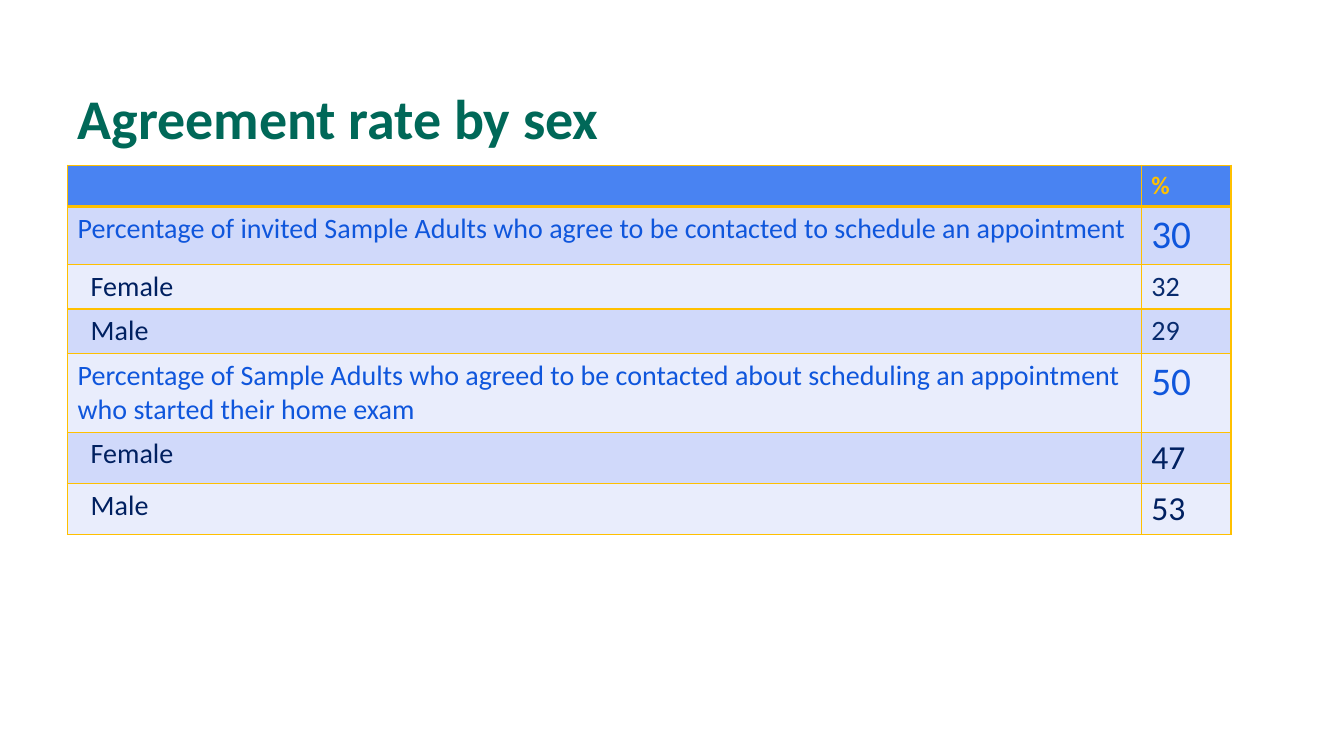
from pptx import Presentation
from pptx import util as u
from pptx.dml.color import RGBColor
from pptx.enum import text
from pptx.oxml import parse_xml
from pptx.oxml.ns import nsdecls

FONT = "Calibri"
GREEN = RGBColor(0x00, 0x68, 0x58)
GOLD = RGBColor(0xFF, 0xC0, 0x00)
HEADER_BLUE = RGBColor(0x49, 0x83, 0xF2)
BANDS = RGBColor(0xD0, 0xD9, 0xFA), RGBColor(0xE9, 0xED, 0xFC)
BRIGHT_BLUE = RGBColor(0x0F, 0x56, 0xDC)
NAVY = RGBColor(0x00, 0x20, 0x60)
SOFT_NAVY = RGBColor(0x08, 0x2B, 0x6E)

COLUMN_WIDTHS = 10.65, 0.89
HEADER_HEIGHT = 0.41
SUBROW_INDENT = 0.23

# label lines, label colour, value, value size, value colour, row height
RATES = [
    (["Percentage of invited Sample Adults who agree to be contacted "
      "to schedule an appointment"], BRIGHT_BLUE, "30", 28, BRIGHT_BLUE, 0.57),
    (["Female"], NAVY, "32", 20, SOFT_NAVY, 0.44),
    (["Male"], NAVY, "29", 20, SOFT_NAVY, 0.44),
    (["Percentage of Sample Adults who agreed to be contacted about "
      "scheduling an appointment", "who started their home exam"],
     BRIGHT_BLUE, "50", 28, BRIGHT_BLUE, 0.78),
    (["Female"], NAVY, "47", 24, NAVY, 0.5),
    (["Male"], NAVY, "53", 24, NAVY, 0.5),
]


def add_span(para, words, size, color, bold=False):
    span = para.add_run()
    span.text = words
    span.font.name = FONT
    span.font.size = u.Pt(size)
    span.font.bold = bold
    span.font.color.rgb = color


def style_cell(cell, fill, bottom_width=1):
    """Give the cell gold borders and a solid fill."""
    properties = cell._tc.get_or_add_tcPr()
    for side, width in (("L", 1), ("R", 1), ("T", 1), ("B", bottom_width)):
        properties.append(parse_xml(
            f'<a:ln{side} {nsdecls("a")} w="{u.Pt(width)}"><a:solidFill>'
            f'<a:srgbClr val="{GOLD}"/></a:solidFill></a:ln{side}>'))
    cell.fill.solid()
    cell.fill.fore_color.rgb = fill


def fill_title(title, left, top, width, height):
    title.left, title.top = u.Inches(left), u.Inches(top)
    title.width, title.height = u.Inches(width), u.Inches(height)
    frame = title.text_frame
    frame.word_wrap = True
    frame.auto_size = text.MSO_AUTO_SIZE.NONE
    frame.vertical_anchor = text.MSO_ANCHOR.BOTTOM
    para = frame.paragraphs[0]
    para.alignment = text.PP_ALIGN.LEFT
    para.line_spacing = u.Pt(40)
    add_span(para, "Agreement rate by sex", 40, GREEN, bold=True)


def add_rate_table(page, left, top):
    heights = [HEADER_HEIGHT] + [rate[-1] for rate in RATES]
    table = page.shapes.add_table(
        len(heights), len(COLUMN_WIDTHS), u.Inches(left), u.Inches(top),
        u.Inches(sum(COLUMN_WIDTHS)), u.Inches(sum(heights))).table
    for column, width in zip(table.columns, COLUMN_WIDTHS):
        column.width = u.Inches(width)
    for row, height in zip(table.rows, heights):
        row.height = u.Inches(height)

    for cell in table.rows[0].cells:
        style_cell(cell, HEADER_BLUE, bottom_width=3)
    add_span(table.cell(0, 1).text_frame.paragraphs[0], "%", 18, GOLD, bold=True)

    for index, rate in enumerate(RATES):
        lines, label_color, value, value_size, value_color, _ = rate
        label_cell, value_cell = table.rows[index + 1].cells
        for cell in (label_cell, value_cell):
            style_cell(cell, BANDS[index % 2])
        if label_color == NAVY:
            label_cell.margin_left = u.Inches(SUBROW_INDENT)
        frame = label_cell.text_frame
        for number, line in enumerate(lines):
            para = frame.add_paragraph() if number else frame.paragraphs[0]
            add_span(para, line, 20, label_color)
        add_span(value_cell.text_frame.paragraphs[0], value, value_size, value_color)


def main():
    deck = Presentation()
    deck.slide_width, deck.slide_height = u.Inches(13.33), u.Inches(7.5)
    page = deck.slides.add_slide(deck.slide_layouts.get_by_name("Title Only"))
    fill_title(page.shapes.title, 0.67, 0.3, 12, 1.25)
    add_rate_table(page, 0.67, 1.64)
    deck.save("out.pptx")


if __name__ == "__main__":
    main()
